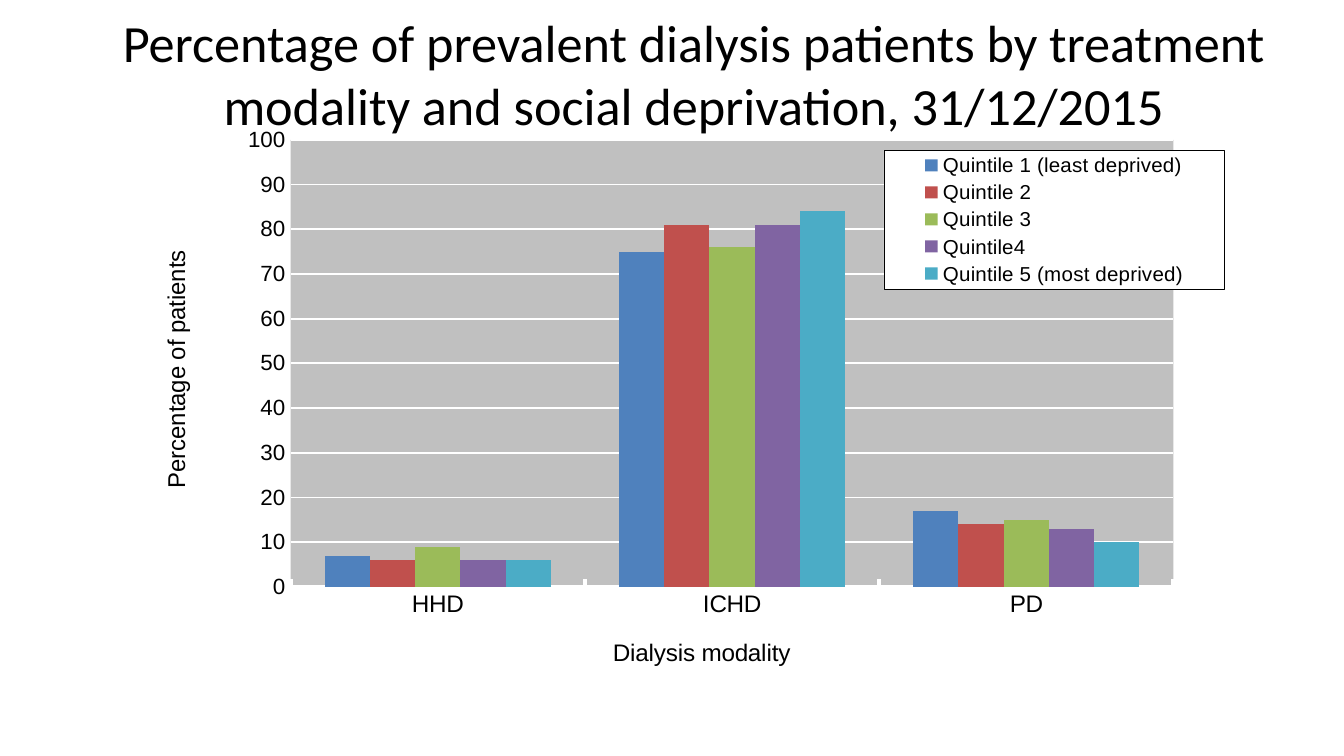
from pptx import Presentation
from pptx.chart.data import CategoryChartData
from pptx.dml.color import RGBColor
from pptx.enum.chart import XL_CHART_TYPE, XL_LEGEND_POSITION, XL_TICK_MARK
from pptx.enum.text import MSO_ANCHOR, PP_ALIGN
from pptx.oxml import parse_xml
from pptx.oxml.ns import nsdecls, qn
from pptx.util import Inches, Pt

WIDTH = 10
HEIGHT = WIDTH * 9 / 16
TITLE_BOX = (0.59, 0.16, 9.14, 0.77)
CHART_BOX = (1.11, 0.94, 8.1, 4.08)
TITLE = ("Percentage of prevalent dialysis patients by treatment modality "
         "and social deprivation, 31/12/2015")
MODALITIES = ("HHD", "ICHD", "PD")
QUINTILES = (
    ("Quintile 1 (least deprived)", (7, 75, 17), "4F81BD"),
    ("Quintile 2", (6, 81, 14), "C0504D"),
    ("Quintile 3", (9, 76, 15), "9BBB59"),
    ("Quintile4", (6, 81, 13), "8064A2"),
    ("Quintile 5 (most deprived)", (6, 84, 10), "4BACC6"),
)


def color(value):
    return RGBColor.from_string(value)


def apply(target, values):
    for name, value in values.items():
        setattr(target, name, value)


def style_font(font, size, name="Arial"):
    apply(font, {"size": Pt(size), "name": name, "bold": False})
    font.fill.solid()
    font.fill.fore_color.rgb = color("000000")


def style_line(line, value, width):
    line.color.rgb = color(value)
    line.width = Pt(width)


def set_layout(element, index, target=None, **percents):
    """Place a chart part at percentages of the chart's size."""
    for old in element.findall(qn("c:layout")):
        element.remove(old)
    target_xml = f'<c:layoutTarget val="{target}"/>' if target else ""
    modes = "".join(f'<c:{key}Mode val="edge"/>' for key in "xy")
    values = "".join(f'<c:{key} val="{percent / 100:.3f}"/>'
                     for key, percent in percents.items())
    element.insert(index, parse_xml(
        f'<c:layout {nsdecls("c")}><c:manualLayout>{target_xml}{modes}{values}'
        '</c:manualLayout></c:layout>'))


def box_properties(fill, line=None):
    outline = (f'<a:solidFill><a:srgbClr val="{line}"/></a:solidFill>'
               if line else "<a:noFill/>")
    return parse_xml(
        f'<c:spPr {nsdecls("c", "a")}><a:solidFill><a:srgbClr val="{fill}"/>'
        f'</a:solidFill><a:ln w="{Pt(0.25)}">{outline}</a:ln></c:spPr>')


def add_title(slide, box):
    frame = slide.shapes.add_textbox(*map(Inches, box)).text_frame
    apply(frame, {"word_wrap": True, "vertical_anchor": MSO_ANCHOR.MIDDLE})
    paragraph = frame.paragraphs[0]
    paragraph.alignment = PP_ALIGN.CENTER
    run = paragraph.add_run()
    run.text = TITLE
    style_font(run.font, 28, "Calibri")


def style_axis(axis, title, size, tick, x, y):
    apply(axis, {"major_tick_mark": tick, "minor_tick_mark": XL_TICK_MARK.NONE})
    style_font(axis.tick_labels.font, size)
    paragraph = axis.axis_title.text_frame.paragraphs[0]
    run = paragraph.add_run()
    run.text = title
    style_font(run.font, 13)
    set_layout(axis.axis_title._element, 1, x=x, y=y)


def style_legend(chart):
    chart.has_legend = True
    legend = chart.legend
    apply(legend, {"position": XL_LEGEND_POSITION.RIGHT,
                   "include_in_layout": False})
    style_font(legend.font, 11)
    element = legend._element
    set_layout(element, 1, x=67.5, y=4.4, w=31.3, h=25.7)
    element.find(qn("c:overlay")).addnext(box_properties("FFFFFF", "000000"))


def add_deprivation_chart(slide, box):
    data = CategoryChartData()
    data.categories = MODALITIES
    for name, values, _ in QUINTILES:
        data.add_series(name, values)
    chart = slide.shapes.add_chart(
        XL_CHART_TYPE.COLUMN_CLUSTERED, *map(Inches, box), data).chart
    chart.has_title = False
    style_font(chart.font, 12)

    plot = chart.plots[0]
    apply(plot, {"gap_width": 150, "overlap": 0, "vary_by_categories": False})
    for series, (_, _, fill) in zip(plot.series, QUINTILES):
        series.format.fill.solid()
        series.format.fill.fore_color.rgb = color(fill)

    category_axis, value_axis = chart.category_axis, chart.value_axis
    style_axis(category_axis, "Dialysis modality", 13, XL_TICK_MARK.INSIDE, 42.2, 94)
    style_line(category_axis.format.line, "FFFFFF", 2.25)
    style_axis(value_axis, "Percentage of patients", 12, XL_TICK_MARK.NONE, 0.7, 22.8)
    value_axis.format.line.fill.background()
    apply(value_axis, {"minimum_scale": 0, "maximum_scale": 100,
                       "major_unit": 10, "has_major_gridlines": True})
    apply(value_axis.tick_labels, {"number_format": "0",
                                   "number_format_is_linked": False})
    style_line(value_axis.major_gridlines.format.line, "FFFFFF", 1)

    plot_area = chart._chartSpace.chart.plotArea
    set_layout(plot_area, 0, "inner", x=13, y=2.5, w=81.1, h=82.8)
    plot_area.append(box_properties("C0C0C0"))
    style_legend(chart)


def main():
    presentation = Presentation()
    apply(presentation, {"slide_width": Inches(WIDTH), "slide_height": Inches(HEIGHT)})
    slide = presentation.slides.add_slide(presentation.slide_layouts[6])
    add_title(slide, TITLE_BOX)
    add_deprivation_chart(slide, CHART_BOX)
    presentation.save("out.pptx")


if __name__ == "__main__":
    main()
